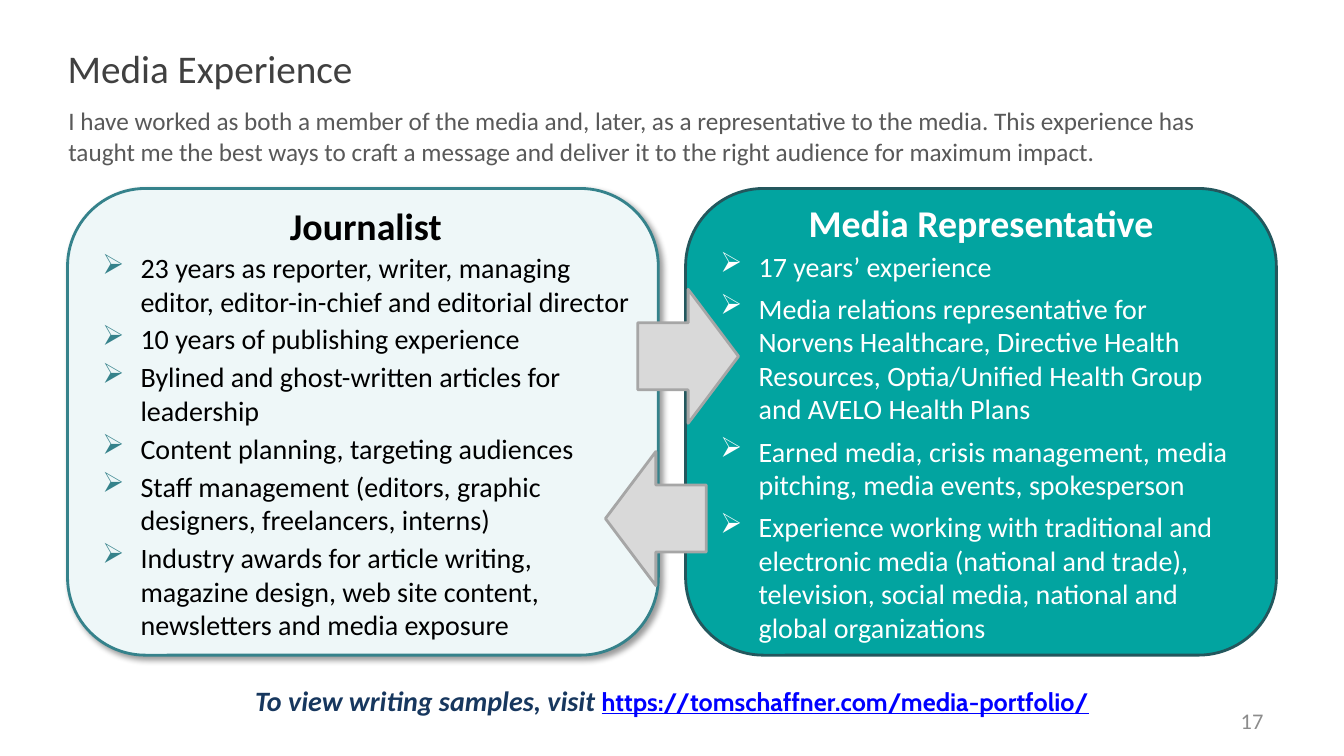
from lxml import etree
from pptx import Presentation
from pptx.dml.color import RGBColor
from pptx.enum.shapes import MSO_SHAPE
from pptx.enum.text import MSO_ANCHOR, PP_ALIGN
from pptx.oxml.ns import qn
from pptx.util import Inches, Pt

ROUNDED = MSO_SHAPE.ROUNDED_RECTANGLE
RIGHT_ARROW, LEFT_ARROW = MSO_SHAPE.RIGHT_ARROW, MSO_SHAPE.LEFT_ARROW
TOP, MIDDLE = MSO_ANCHOR.TOP, MSO_ANCHOR.MIDDLE
LEFT, CENTER, RIGHT = PP_ALIGN.LEFT, PP_ALIGN.CENTER, PP_ALIGN.RIGHT

WIDTH, HEIGHT = 13.33, 7.5
MARGIN, GAP = 0.67, 0.27
CARD_WIDTH = (WIDTH - 2 * MARGIN - GAP) / 2
CARD_TOP, CARD_HEIGHT = 1.87, 4.63
ARROW_WIDTH, ARROW_HEIGHT = 1, 1.33
DEFAULT_INSETS = (0.1, 0.05, 0.1, 0.05)

JOURNALIST = [
    "23 years as reporter, writer, managing editor, editor-in-chief and editorial director",
    "10 years of publishing experience",
    "Bylined and ghost-written articles for leadership",
    "Content planning, targeting audiences",
    "Staff management (editors, graphic designers, freelancers, interns)",
    "Industry awards for article writing, magazine design, web site content, "
    "newsletters and media exposure",
]
REPRESENTATIVE = [
    "17 years’ experience",
    "Media relations representative for Norvens Healthcare, Directive Health Resources, "
    "Optia/Unified Health Group and AVELO Health Plans",
    "Earned media, crisis management, media pitching, media events, spokesperson",
    "Experience working with traditional and electronic media (national and trade), "
    "television, social media, national and global organizations",
]


def color(hex_string):
    return RGBColor.from_string(hex_string)


def add_run(paragraph, text, size, hex_color, font="Calibri",
            bold=False, italic=False, underline=False):
    run = paragraph.add_run()
    run.text = text
    run.font.name, run.font.size = font, Pt(size)
    run.font.bold, run.font.italic = bold, italic
    if underline:
        run.font.underline = True
    run.font.color.rgb = color(hex_color)


def set_frame(shape, anchor, insets=DEFAULT_INSETS):
    frame = shape.text_frame
    frame.word_wrap = True
    frame.vertical_anchor = anchor
    (frame.margin_left, frame.margin_top,
     frame.margin_right, frame.margin_bottom) = map(Inches, insets)
    return frame


def add_text(slide, box, align=LEFT, anchor=TOP, insets=DEFAULT_INSETS):
    """Add a one-paragraph text box and return its paragraph."""
    frame = set_frame(slide.shapes.add_textbox(*map(Inches, box)), anchor, insets)
    paragraph = frame.paragraphs[0]
    paragraph.alignment = align
    return paragraph


def add_panel(slide, kind, box, fill, line):
    shape = slide.shapes.add_shape(kind, *map(Inches, box))
    shape.shadow.inherit = False
    shape.fill.solid()
    shape.fill.fore_color.rgb = color(fill)
    shape.line.color.rgb = color(line)
    shape.line.width = Pt(2)
    return shape


def add_drop_shadow(shape):
    effects = shape._element.spPr.find(qn("a:effectLst"))
    shadow = etree.SubElement(effects, qn("a:outerShdw"), blurRad=str(Pt(4)),
                              dist=str(Pt(3)), dir="2700000", algn="tl", rotWithShape="0")
    black = etree.SubElement(shadow, qn("a:srgbClr"), val="000000")
    etree.SubElement(black, qn("a:alpha"), val="40000")


def add_bullet(paragraph, hex_color):
    properties = paragraph._p.get_or_add_pPr()
    properties.set("marL", str(Inches(0.4)))
    properties.set("indent", str(Inches(-0.38)))
    bullet_color = etree.SubElement(properties, qn("a:buClr"))
    etree.SubElement(bullet_color, qn("a:srgbClr"), val=hex_color)
    etree.SubElement(properties, qn("a:buChar"), char="➢")


def add_card(slide, box, heading, items, fill, line, text_color, bullet_color,
             heading_gap, item_gap, insets=DEFAULT_INSETS):
    card = add_panel(slide, ROUNDED, box, fill, line)
    frame = set_frame(card, MIDDLE, insets)
    title = frame.paragraphs[0]
    title.alignment = CENTER
    title.space_after = Pt(heading_gap)
    add_run(title, heading, 27, text_color, bold=True)
    for item in items:
        paragraph = frame.add_paragraph()
        paragraph.alignment = LEFT
        paragraph.space_after = Pt(item_gap)
        add_bullet(paragraph, bullet_color)
        add_run(paragraph, item, 20, text_color)
    return card


def add_header(slide, left, width):
    title = add_text(slide, (left, 0.42, width, 0.5), anchor=MIDDLE,
                     insets=(0, 0.07, 0, 0.07))
    add_run(title, "Media Experience", 28, "404040")
    intro = add_text(slide, (left - 0.09, 1, width + 0.09, 0.71))
    add_run(intro, "I have worked as both a member of the media and, later, as a "
            "representative to the media. This experience has taught me the best ways to "
            "craft a message and deliver it to the right audience for maximum impact.",
            18, "595959")


def add_cards(slide, left, top):
    journalist = add_card(
        slide, (left, top, CARD_WIDTH, CARD_HEIGHT), "Journalist", JOURNALIST,
        "EEF7F8", "35828B", "000000", "35828B", 2, 3, (0.1, 0.05, 0.04, 0.05))
    add_drop_shadow(journalist)
    add_card(
        slide, (left + CARD_WIDTH + GAP, top, CARD_WIDTH, CARD_HEIGHT),
        "Media Representative", REPRESENTATIVE,
        "02A4A0", "23575D", "FFFFFF", "FFFFFF", 3, 6)


def add_arrows(slide, center, top):
    for kind, shift, drop in ((RIGHT_ARROW, 0.16, 1), (LEFT_ARROW, -0.16, 2.61)):
        box = (center + shift - ARROW_WIDTH / 2, top + drop, ARROW_WIDTH, ARROW_HEIGHT)
        add_panel(slide, kind, box, "D9D9D9", "A6A6A6")


def add_footer(slide, right):
    samples = add_text(slide, (WIDTH * 0.175, 6.73, WIDTH * 0.65, 0.44), CENTER)
    add_run(samples, "To view writing samples, visit ", 20, "17375E", bold=True, italic=True)
    add_run(samples, "https://tomschaffner.com/media-portfolio/", 18, "0000FF",
            font="Cabin", bold=True, underline=True)
    number = add_text(slide, (right - 3.11, 6.95, 3.11, 0.4), RIGHT, MIDDLE,
                      (0.13, 0.07, 0.13, 0.07))
    add_run(number, "17", 16, "8C8C8C")


def main():
    presentation = Presentation()
    presentation.slide_width, presentation.slide_height = Inches(WIDTH), Inches(HEIGHT)
    slide = presentation.slides.add_slide(presentation.slide_layouts[6])
    add_header(slide, MARGIN, WIDTH - 2 * MARGIN)
    add_cards(slide, MARGIN, CARD_TOP)
    add_arrows(slide, WIDTH / 2, CARD_TOP)
    add_footer(slide, WIDTH - MARGIN)
    presentation.save("out.pptx")


if __name__ == "__main__":
    main()
